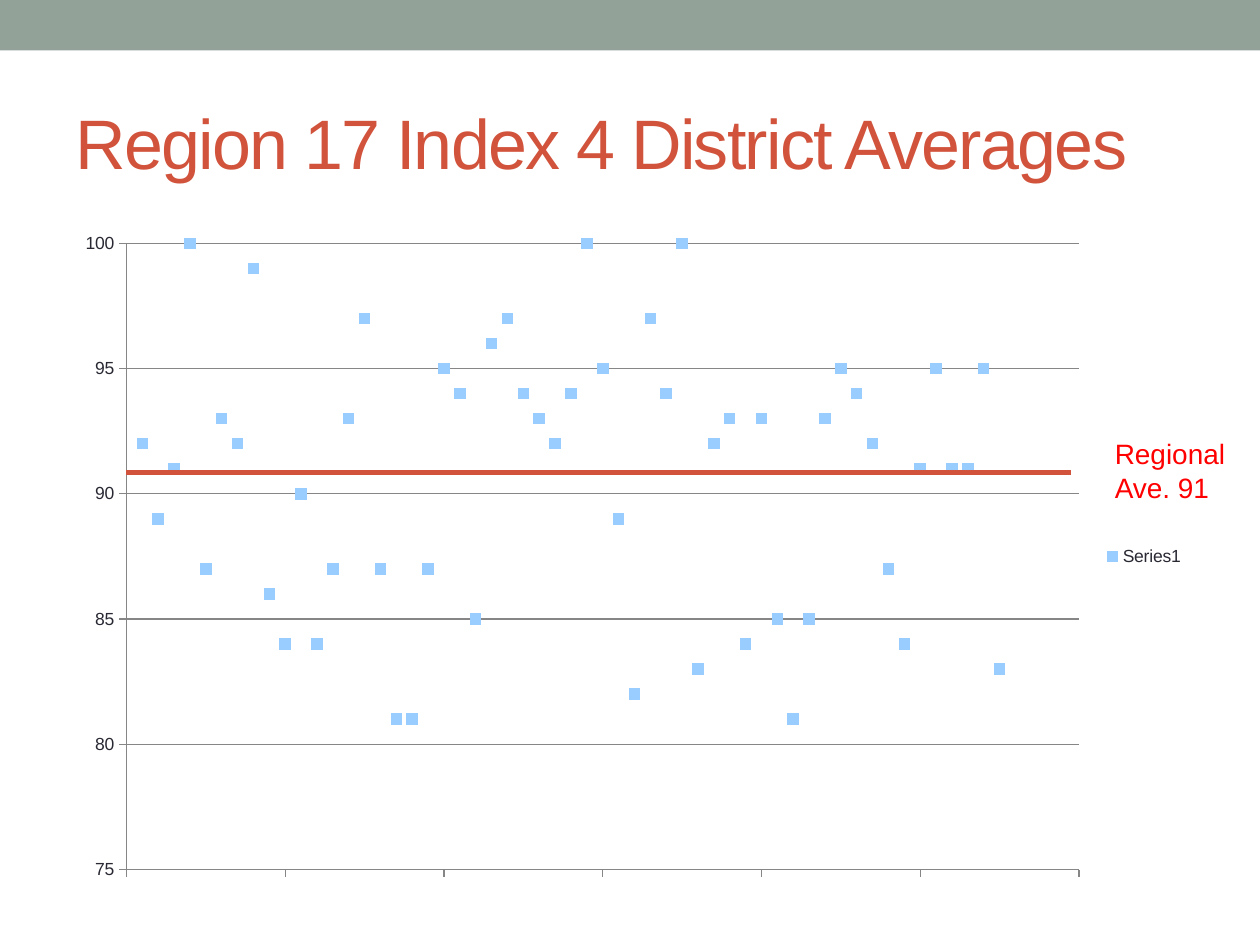
from lxml import etree
from pptx import Presentation, util as u
from pptx.chart.data import XyChartData
from pptx.dml.color import RGBColor
from pptx.enum import chart as ch, shapes, text
from pptx.oxml.ns import qn

SAGE = RGBColor(0x93, 0xA2, 0x99)
RUST = RGBColor(0xD2, 0x53, 0x3C)
RED = RGBColor(0xFF, 0x00, 0x00)
INK = RGBColor(0x29, 0x29, 0x34)
SKY = RGBColor(0x99, 0xCC, 0xFF)
GRAY = RGBColor(0x86, 0x86, 0x86)

COLS, ROWS = 120, 90
AVERAGES = [
    92, 89, 91, 100, 87, 93, 92, 99, 86, 84, 90, 84, 87, 93, 97, 87, 81, 81, 87,
    95, 94, 85, 96, 97, 94, 93, 92, 94, 100, 95, 89, 82, 97, 94, 100, 83, 92, 93,
    84, 93, 85, 81, 85, 93, 95, 94, 92, 87, 84, 91, 95, 91, 91, 95, 83,
]


def write(tf, words, size=16, color=INK, font="Arial", spacing=None,
          anchor=text.MSO_ANCHOR.TOP):
    """Put one formatted run in a text frame; spacing is in points."""
    tf.word_wrap = True
    tf.vertical_anchor = anchor
    r = tf.paragraphs[0].add_run()
    r.text = words
    r.font.size, r.font.name = u.Pt(size), font
    r.font.color.rgb = color
    if spacing is not None:
        r._r.get_or_add_rPr().set("spc", str(int(spacing * 100)))


def place_plot(chart, **shares):
    """Fix the inner plot area, as shares of the chart's size."""
    area = chart._chartSpace.chart.plotArea
    for old in area.findall(qn("c:layout")):
        area.remove(old)
    layout = etree.Element(qn("c:layout"))
    area.insert(0, layout)
    manual = etree.SubElement(layout, qn("c:manualLayout"))
    values = {"layoutTarget": "inner", "xMode": "edge", "yMode": "edge", **shares}
    for tag, value in values.items():
        etree.SubElement(manual, qn(f"c:{tag}")).set("val", str(value))


class Deck:
    def __init__(self, width=10, height=7.5):
        self.prs = Presentation()
        self.prs.slide_width, self.prs.slide_height = u.Inches(width), u.Inches(height)
        self.s = self.prs.slides.add_slide(self.prs.slide_layouts[6])

    def grid(self, *cells):
        """Turn alternating columns and rows into slide lengths."""
        units = (self.prs.slide_width / COLS, self.prs.slide_height / ROWS)
        return [round(c * units[i % 2]) for i, c in enumerate(cells)]

    def bar(self, *box, color):
        sp = self.s.shapes.add_shape(shapes.MSO_SHAPE.RECTANGLE, *self.grid(*box))
        sp.shadow.inherit = False
        sp.fill.solid()
        sp.fill.fore_color.rgb = color
        sp.line.fill.background()

    def label(self, *box, words, **style):
        write(self.s.shapes.add_textbox(*self.grid(*box)).text_frame, words, **style)

    def line(self, *ends, color, width):
        cx = self.s.shapes.add_connector(shapes.MSO_CONNECTOR.STRAIGHT, *self.grid(*ends))
        cx.line.color.rgb, cx.line.width = color, u.Pt(width)
        etree.SubElement(cx._element.spPr, qn("a:effectLst"))

    def scatter(self, *box, values, color):
        data = XyChartData()
        series = data.add_series("Series1")
        for x, y in enumerate(values, 1):
            series.add_data_point(x, y)
        chart = self.s.shapes.add_chart(
            ch.XL_CHART_TYPE.XY_SCATTER, *self.grid(*box), data).chart
        chart.has_title = False
        chart.font.size, chart.font.name = u.Pt(10), "Arial"
        chart.font.color.rgb = INK
        chart.has_legend = True
        chart.legend.position = ch.XL_LEGEND_POSITION.RIGHT
        chart.legend.include_in_layout = False
        chart.plots[0].vary_by_categories = False

        dots = chart.plots[0].series[0]
        dots.smooth = False
        dots.format.line.fill.background()
        dots.marker.style, dots.marker.size = ch.XL_MARKER_STYLE.SQUARE, 6
        dots.marker.format.fill.solid()
        dots.marker.format.fill.fore_color.rgb = color
        dots.marker.format.line.fill.background()

        x_axis, y_axis = chart.category_axis, chart.value_axis
        for axis, low, high, step in ((x_axis, 0, 60, 10), (y_axis, 75, 100, 5)):
            axis.minimum_scale, axis.maximum_scale, axis.major_unit = low, high, step
            axis.major_tick_mark = ch.XL_TICK_MARK.OUTSIDE
            axis.minor_tick_mark = ch.XL_TICK_MARK.NONE
            axis.format.line.color.rgb = GRAY
        x_axis.has_major_gridlines = False
        x_axis.tick_label_position = ch.XL_TICK_LABEL_POSITION.NONE
        y_axis.has_major_gridlines = True
        y_axis.major_gridlines.format.line.color.rgb = GRAY
        y_axis.tick_labels.number_format = "0"
        y_axis.tick_labels.number_format_is_linked = False
        place_plot(chart, x=0.056, y=0.034, w=0.84, h=0.932)


def main():
    deck = Deck()
    deck.bar(0, 0, COLS, 4.8, color=SAGE)
    deck.label(6, 7, 108, 13, words="Region 17 Index 4 District Averages", size=40,
               color=RUST, spacing=-1, anchor=text.MSO_ANCHOR.MIDDLE)
    deck.scatter(6, 21, 108, 64, values=AVERAGES, color=SKY)
    deck.line(12, 45, 102, 45, color=RUST, width=3)
    deck.label(105, 41, 13, 7.7, words="Regional Ave. 91", color=RED)
    deck.prs.save("out.pptx")


if __name__ == "__main__":
    main()
